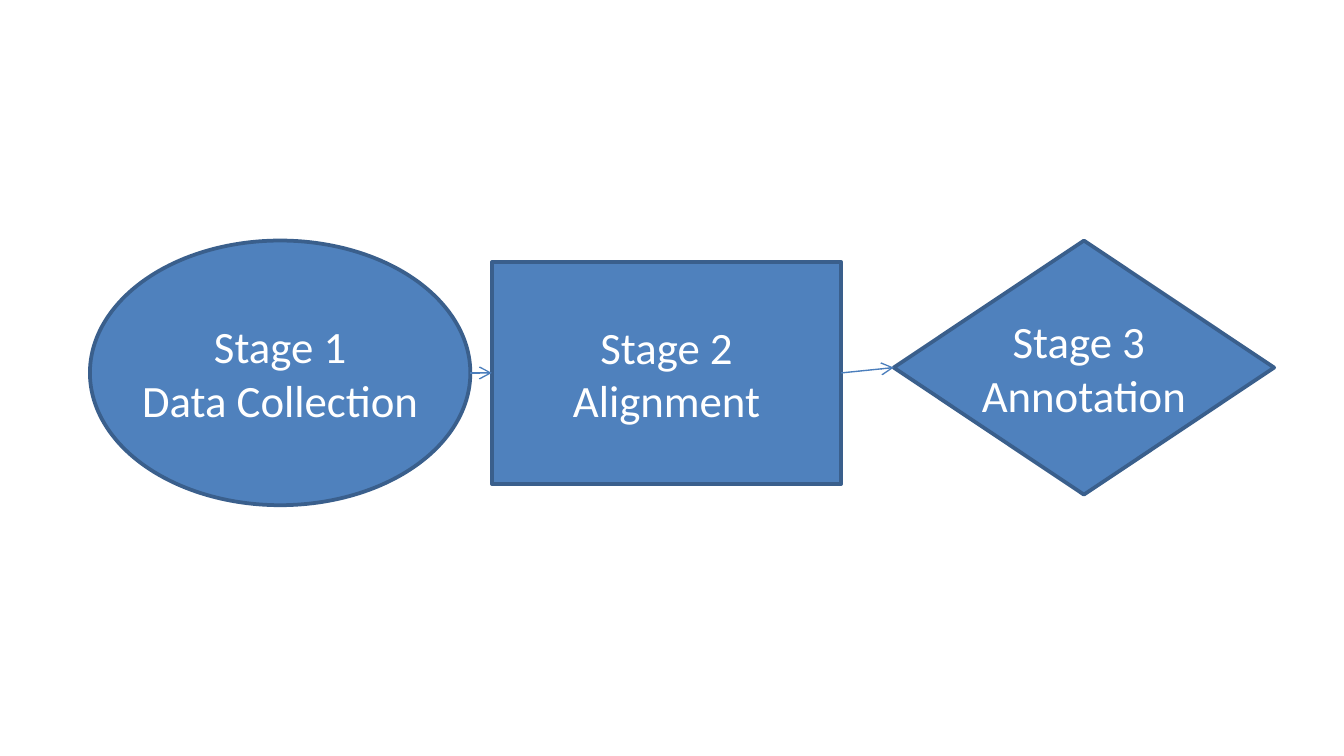
from lxml import etree
from pptx import Presentation
from pptx.dml.color import RGBColor
from pptx.enum.shapes import MSO_CONNECTOR, MSO_SHAPE
from pptx.enum.text import MSO_ANCHOR, PP_ALIGN
from pptx.oxml.ns import qn
from pptx.util import Pt

ELLIPSE = MSO_SHAPE.OVAL
RECTANGLE = MSO_SHAPE.RECTANGLE
DECISION = MSO_SHAPE.FLOWCHART_DECISION
STRAIGHT = MSO_CONNECTOR.STRAIGHT
MIDDLE = MSO_ANCHOR.MIDDLE
CENTER = PP_ALIGN.CENTER

COLORS = {"fill": "4F81BD", "outline": "3A5F8C", "arrow": "4B7EBC", "text": "FFFFFF"}
BLANK_LAYOUT = 6

# Shape type, box (left, top, width, height), lines, wrap, side inset
STAGES = [
    (ELLIPSE, (48.2, 128.9, 203.8, 141.8), ["Stage 1", "Data Collection"], False, 7.2),
    (RECTANGLE, (263.5, 140.4, 187.2, 118.8), ["Stage 2", "Alignment"], True, 7.2),
    (DECISION, (478.8, 128.9, 203.8, 136.1), ["Stage 3 ", "Annotation"], False, 0),
]


def color(name):
    return RGBColor.from_string(COLORS[name])


def write_text(shape, lines, size=24, font="Calibri", ink="text", wrap=True, side_inset=7.2):
    frame = shape.text_frame
    frame.word_wrap = wrap
    frame.vertical_anchor = MIDDLE
    frame.margin_left = frame.margin_right = Pt(side_inset)
    for index, line in enumerate(lines):
        paragraph = frame.add_paragraph() if index else frame.paragraphs[0]
        paragraph.alignment = CENTER
        run = paragraph.add_run()
        run.text = line
        run.font.size = Pt(size)
        run.font.name = font
        run.font.color.rgb = color(ink)


def add_stage(slide, kind, box, lines, wrap, side_inset):
    shape = slide.shapes.add_shape(kind, *map(Pt, box))
    shape.shadow.inherit = False
    shape.fill.solid()
    shape.fill.fore_color.rgb = color("fill")
    shape.line.color.rgb = color("outline")
    shape.line.width = Pt(2)
    write_text(shape, lines, wrap=wrap, side_inset=side_inset)
    return shape


def add_arrow(slide, source, target):
    """Join the right middle of one shape to the left middle of the next."""
    arrow = slide.shapes.add_connector(
        STRAIGHT,
        source.left + source.width, source.top + source.height // 2,
        target.left, target.top + target.height // 2,
    )
    arrow.line.color.rgb = color("arrow")
    arrow.line.width = Pt(0.75)
    properties = arrow.element.spPr
    etree.SubElement(properties.find(qn("a:ln")), qn("a:tailEnd"), type="arrow")
    etree.SubElement(properties, qn("a:effectLst"))


def add_process(slide, stages):
    shapes = [add_stage(slide, *stage) for stage in stages]
    for source, target in zip(shapes, shapes[1:]):
        add_arrow(slide, source, target)


def main():
    presentation = Presentation()
    presentation.slide_width = Pt(720)
    presentation.slide_height = Pt(405)
    slide = presentation.slides.add_slide(presentation.slide_layouts[BLANK_LAYOUT])
    add_process(slide, STAGES)
    presentation.save("out.pptx")


if __name__ == "__main__":
    main()
